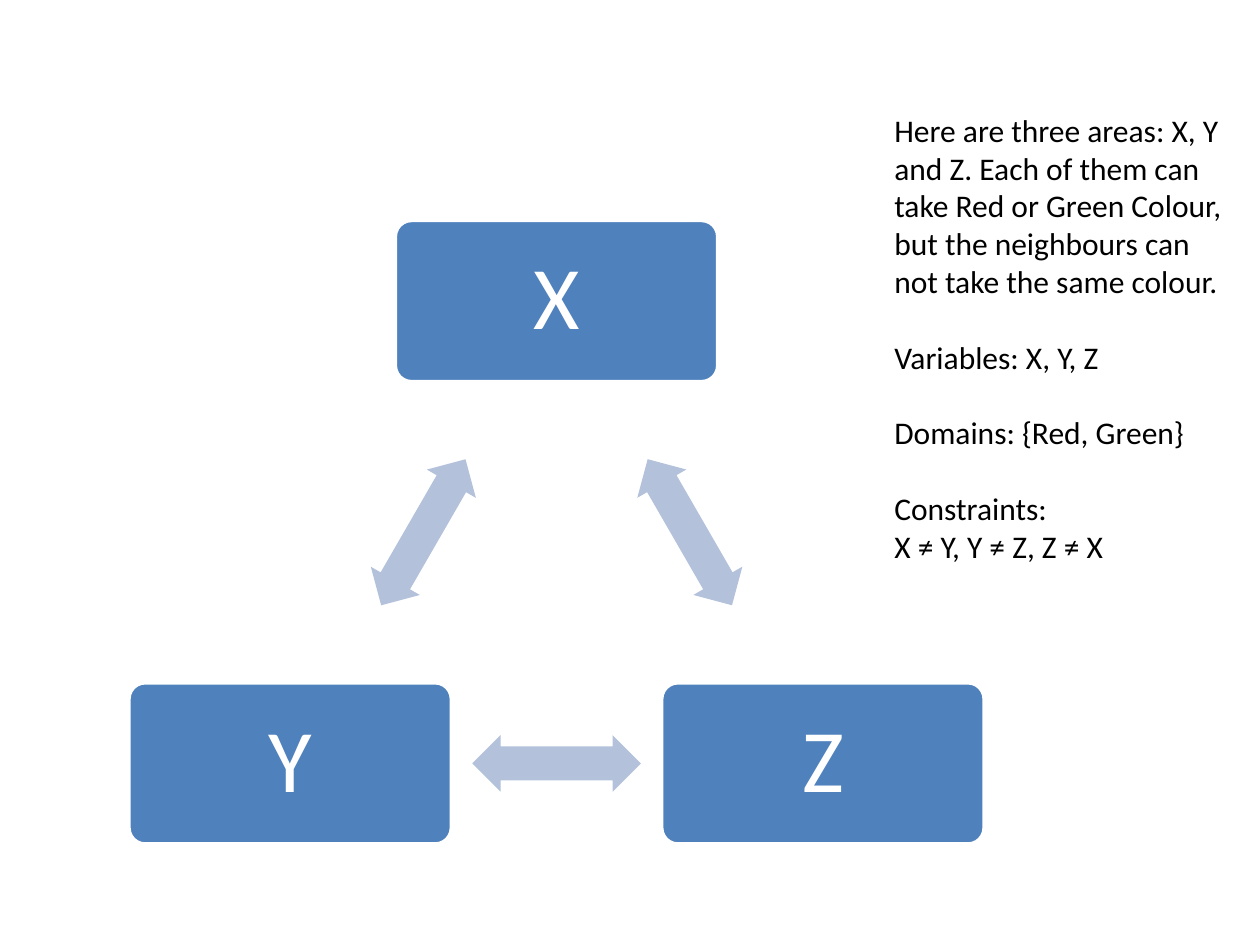
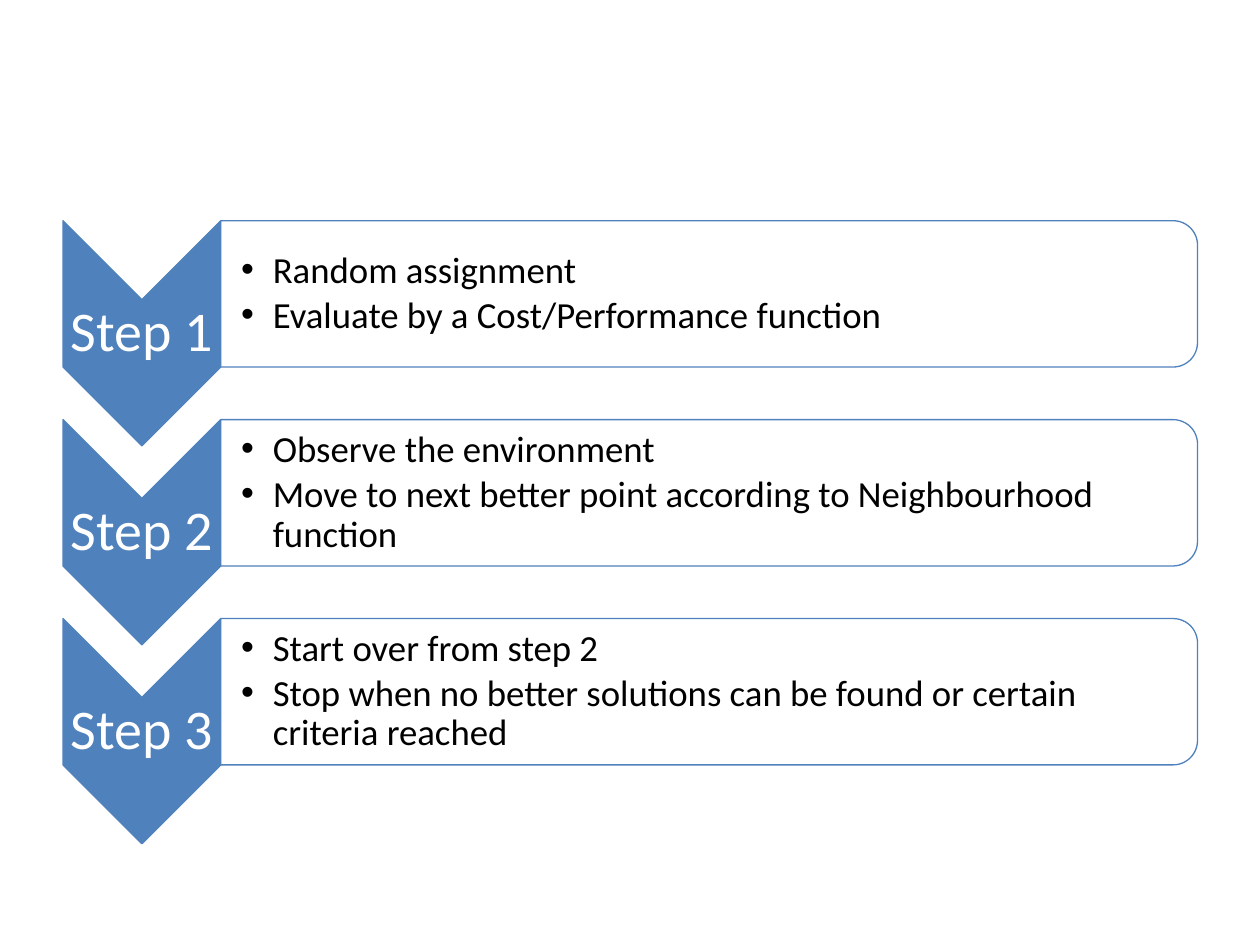
from lxml.etree import SubElement
from pptx import Presentation
from pptx.dml.color import RGBColor
from pptx.enum.shapes import MSO_SHAPE
from pptx.enum.text import MSO_ANCHOR, PP_ALIGN
from pptx.oxml.ns import qn
from pptx.util import Cm, Pt

BLUE = RGBColor(0x4F, 0x81, 0xBD)
PALE_BLUE = RGBColor(0xB3, 0xC1, 0xDB)
WHITE = RGBColor(0xFF, 0xFF, 0xFF)
BLACK = RGBColor(0x00, 0x00, 0x00)
FONT = "Calibri"
BLANK_LAYOUT = 6

NODE_WIDTH, NODE_HEIGHT = 6.5, 3.25
ARROW_WIDTH, ARROW_HEIGHT = 3.4, 1.14
NODE_CENTRES = {"X": (11.22, 6.07), "Z": (16.59, 15.39), "Y": (5.85, 15.39)}
ARROWS = (("X", "Z", 60), ("Z", "Y", 180), ("Y", "X", 300))
PROBLEM_BLOCKS = (
    ("Here are three areas: X, Y and Z. Each of them can take Red or Green "
     "Colour, but the neighbours can not take the same colour.",),
    ("Variables: X, Y, Z",),
    ("Domains: {Red, Green}",),
    ("Constraints:", "X ≠ Y, Y ≠ Z, Z ≠ X"),
)

STEPS_LEFT, STEPS_TOP, STEP_PITCH = 1.27, 4.45, 4.01
CHEVRON_WIDTH, CHEVRON_HEIGHT = 3.18, 4.54
PANEL_WIDTH, PANEL_HEIGHT = 19.69, 2.95
STEPS = (
    ("Random assignment", "Evaluate by a Cost/Performance function"),
    ("Observe the environment",
     "Move to next better point according to Neighbourhood function"),
    ("Start over from step 2",
     "Stop when no better solutions can be found or certain criteria reached"),
)


def set_attributes(target, values):
    for name, value in values.items():
        setattr(target, name, value)


class SlideBuilder:
    def __init__(self):
        self.deck = Presentation()
        set_attributes(self.deck, {"slide_width": Cm(25.4),
                                   "slide_height": Cm(19.05)})
        self.page = None

    def new_page(self):
        layout = self.deck.slide_layouts[BLANK_LAYOUT]
        self.page = self.deck.slides.add_slide(layout)

    def shape(self, kind, centre, size, fill, line=None, line_width=0.75,
              rotation=0, adjustments=()):
        """Add a shape around its centre; size is that before rotation."""
        (x, y), (width, height) = centre, size
        shape = self.page.shapes.add_shape(
            kind, Cm(x - width / 2), Cm(y - height / 2), Cm(width), Cm(height))
        shape.shadow.inherit = False
        shape.rotation = rotation
        for index, value in enumerate(adjustments):
            shape.adjustments[index] = value
        shape.fill.solid()
        shape.fill.fore_color.rgb = fill
        if line is None:
            shape.line.fill.background()
        else:
            shape.line.color.rgb = line
            shape.line.width = Pt(line_width)
        return shape

    def text_box(self, left, top, width, height):
        return self.page.shapes.add_textbox(
            Cm(left), Cm(top), Cm(width), Cm(height))

    def set_frame(self, box, inset, left_inset=None):
        set_attributes(box.text_frame, {
            "word_wrap": True,
            "vertical_anchor": MSO_ANCHOR.MIDDLE,
            "margin_left": Cm(inset if left_inset is None else left_inset),
            "margin_right": Cm(inset),
            "margin_top": Cm(inset),
            "margin_bottom": Cm(inset),
        })

    def paragraph(self, box, text, size, colour, **paragraph_format):
        """Fill the empty first paragraph, or add one after the others."""
        frame = box.text_frame
        para = frame.paragraphs[0] if not frame.text else frame.add_paragraph()
        set_attributes(para, paragraph_format)
        span = para.add_run()
        span.text = text
        set_attributes(span.font, {"name": FONT, "size": Pt(size)})
        span.font.color.rgb = colour
        return para

    def label(self, box, text, size, inset):
        self.set_frame(box, inset)
        self.paragraph(box, text, size, WHITE,
                       alignment=PP_ALIGN.CENTER, line_spacing=0.9)

    def bullet(self, box, text):
        para = self.paragraph(box, text, 21, BLACK, level=1,
                              line_spacing=0.9, space_after=Pt(3))
        properties = para._p.get_or_add_pPr()
        properties.set("marL", str(Cm(0.64)))
        properties.set("indent", str(-Cm(0.64)))
        SubElement(properties, qn("a:buFont"), typeface="Arial")
        SubElement(properties, qn("a:buChar"), char="•")

    def node(self, name, centre):
        box = self.shape(MSO_SHAPE.ROUNDED_RECTANGLE, centre,
                         (NODE_WIDTH, NODE_HEIGHT), BLUE, WHITE, 2,
                         adjustments=(0.1,))
        self.label(box, name, 51, 0.53)

    def arrow_between(self, start, end, rotation):
        middle = [(a + b) / 2 for a, b in zip(start, end)]
        self.shape(MSO_SHAPE.LEFT_RIGHT_ARROW, middle,
                   (ARROW_WIDTH, ARROW_HEIGHT), PALE_BLUE,
                   rotation=rotation, adjustments=(0.6, 0.5))

    def step(self, number, top, points):
        """Add a downward chevron with its label and the panel beside it."""
        self.shape(MSO_SHAPE.CHEVRON,
                   (STEPS_LEFT + CHEVRON_WIDTH / 2, top + CHEVRON_HEIGHT / 2),
                   (CHEVRON_HEIGHT, CHEVRON_WIDTH), BLUE, BLUE, rotation=90)
        label = self.text_box(STEPS_LEFT, top + 1.59, CHEVRON_WIDTH, 1.37)
        self.label(label, f"Step {number}", 32, 0.05)

        left = STEPS_LEFT + CHEVRON_WIDTH
        panel = self.shape(MSO_SHAPE.ROUND_2_SAME_RECTANGLE,
                           (left + PANEL_WIDTH / 2, top + PANEL_HEIGHT / 2),
                           (PANEL_HEIGHT, PANEL_WIDTH), WHITE, BLUE,
                           rotation=90)
        fill_colour = panel._element.spPr.find(
            f"{qn('a:solidFill')}/{qn('a:srgbClr')}")
        SubElement(fill_colour, qn("a:alpha"), val="90000")
        box = self.text_box(left, top + 0.14, PANEL_WIDTH - 0.15, 2.67)
        self.set_frame(box, 0.03, left_inset=0.41)
        for point in points:
            self.bullet(box, point)


def build_colouring_slide(builder):
    builder.new_page()
    for name, centre in NODE_CENTRES.items():
        builder.node(name, centre)
    for start, end, rotation in ARROWS:
        builder.arrow_between(NODE_CENTRES[start], NODE_CENTRES[end], rotation)
    box = builder.text_box(17.78, 2.11, 7.19, 9.5)
    box.text_frame.word_wrap = True
    for block_index, block in enumerate(PROBLEM_BLOCKS):
        for line_index, text in enumerate(block):
            opens_block = block_index > 0 and line_index == 0
            builder.paragraph(box, text, 18, BLACK,
                              space_before=Pt(21.6 if opens_block else 0))


def build_steps_slide(builder):
    builder.new_page()
    for index, points in enumerate(STEPS):
        builder.step(index + 1, STEPS_TOP + index * STEP_PITCH, points)


def main():
    builder = SlideBuilder()
    build_colouring_slide(builder)
    build_steps_slide(builder)
    builder.deck.save("out.pptx")


if __name__ == "__main__":
    main()
